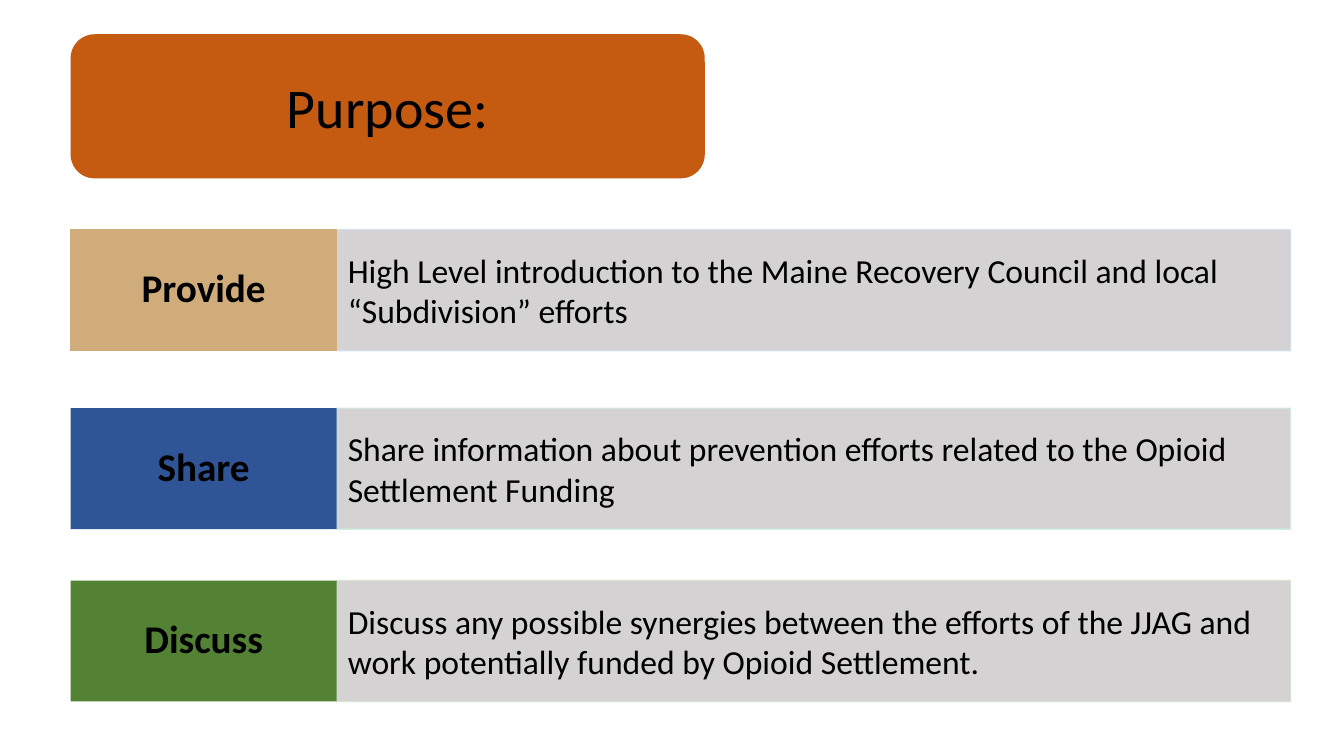
"""Build the purpose slide: a title block above three labelled goals."""
from pptx import Presentation
from pptx.dml.color import RGBColor
from pptx.enum.shapes import MSO_SHAPE as Shape
from pptx.enum.text import MSO_ANCHOR as Anchor, PP_ALIGN as Align
from pptx.oxml.ns import qn
from pptx.util import Inches, Pt
from lxml.etree import SubElement

TITLE = "Purpose:"
GOALS = [
    {"label": "Provide", "top": 2.28, "fill": "D0AC7B", "edge": "D0AC7B", "rim": "D2DEEF",
     "text": "High Level introduction to the Maine Recovery Council and local “Subdivision” efforts"},
    {"label": "Share", "top": 4.05, "fill": "2F5597", "edge": None, "rim": "D0EAE0",
     "text": "Share information about prevention efforts related to the Opioid Settlement Funding"},
    {"label": "Discuss", "top": 5.76, "fill": "548235", "edge": None, "rim": "D5E3CF",
     "text": "Discuss any possible synergies between the efforts of the JJAG and "
             "work potentially funded by Opioid Settlement."},
]
THEME = {
    "font": "Calibri", "ink": "000000", "title": "C55A11", "panel": "D0CECE", "opacity": 90,
    "title_size": 40, "label_size": 28, "text_size": 24,
}
LEFT, LABEL_WIDTH, TEXT_WIDTH, ROW_HEIGHT = 0.7, 2.64, 9.46, 1.2
TITLE_BOX = (LEFT, 0.34, 6.29, 1.43)
LABEL_FORMAT = {"alignment": Align.CENTER, "line_spacing": 0.9, "space_after": Pt(12)}


def paint(color_format, color, opacity):
    color_format.solid()
    color_format.fore_color.rgb = RGBColor.from_string(color)
    return opacity


def fade(element, opacity):
    for color in element.iter(qn("a:srgbClr")):
        SubElement(color, qn("a:alpha")).set("val", str(opacity * 1000))


def add_box(page, kind, place, fill, edge=None, opacity=100):
    box = page.shapes.add_shape(kind, *map(Inches, place))
    box.shadow.inherit = False
    box.fill.solid()
    box.fill.fore_color.rgb = RGBColor.from_string(fill)
    if edge:
        box.line.color.rgb = RGBColor.from_string(edge)
        box.line.width = Pt(1)
    else:
        box.line.fill.background()
    if opacity < 100:
        fade(box.fill._xPr, opacity)
    return box


def write(box, text, size, para_format, bold=False, insets=(0.1, 0.05)):
    frame = box.text_frame
    across, down = map(Inches, insets)
    frame_format = {"word_wrap": True, "vertical_anchor": Anchor.MIDDLE, "margin_left": across,
                    "margin_right": across, "margin_top": down, "margin_bottom": down}
    para = frame.paragraphs[0]
    span = para.add_run()
    span.text = text
    span.font.color.rgb = RGBColor.from_string(THEME["ink"])
    font_format = {"name": THEME["font"], "size": Pt(size), "bold": bold}
    for target, values in ((frame, frame_format), (para, para_format), (span.font, font_format)):
        for name, value in values.items():
            setattr(target, name, value)


def add_goal(page, goal):
    panel_place = (LEFT + LABEL_WIDTH, goal["top"], TEXT_WIDTH, ROW_HEIGHT)
    panel = add_box(page, Shape.RECTANGLE, panel_place, THEME["panel"], goal["rim"], THEME["opacity"])
    write(panel, goal["text"], THEME["text_size"], {"alignment": Align.LEFT}, insets=(0.11, 0.52))
    label_place = (LEFT, goal["top"], LABEL_WIDTH, ROW_HEIGHT)
    label = add_box(page, Shape.RECTANGLE, label_place, goal["fill"], goal["edge"])
    write(label, goal["label"], THEME["label_size"], LABEL_FORMAT, bold=True, insets=(0.08, 0.2))


def main():
    deck = Presentation()
    deck.slide_width, deck.slide_height = Inches(13.33), Inches(7.5)
    page = deck.slides.add_slide(deck.slide_layouts[6])
    for goal in GOALS:
        add_goal(page, goal)
    title = add_box(page, Shape.ROUNDED_RECTANGLE, TITLE_BOX, THEME["title"])
    write(title, TITLE, THEME["title_size"], {"alignment": Align.CENTER})
    deck.save("out.pptx")


if __name__ == "__main__":
    main()
